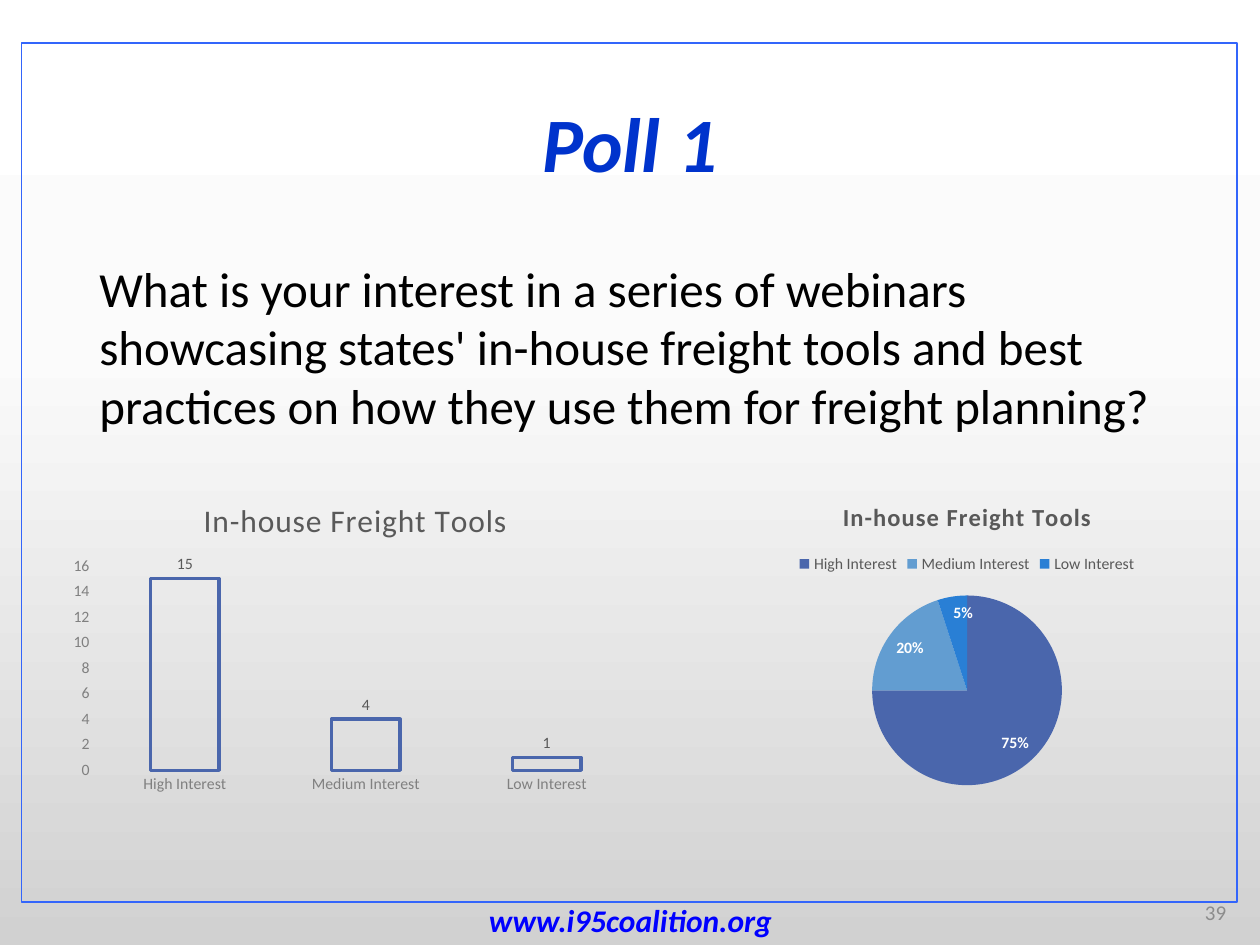
from copy import deepcopy

from pptx import Presentation
from pptx.chart.data import CategoryChartData
from pptx.dml.color import RGBColor
from pptx.enum.chart import XL_CHART_TYPE as ChartType
from pptx.enum.chart import XL_LABEL_POSITION as LabelPosition
from pptx.enum.chart import XL_LEGEND_POSITION as LegendPosition
from pptx.enum.chart import XL_TICK_MARK as TickMark
from pptx.enum.shapes import MSO_SHAPE as Shape
from pptx.enum.text import MSO_ANCHOR as Anchor
from pptx.enum.text import PP_ALIGN as Align
from pptx.util import Inches, Pt

FONT = "Calibri"
CHART_TITLE = "In-house Freight Tools"
CATEGORIES = ["High Interest", "Medium Interest", "Low Interest"]
BACKGROUND_STOPS = [(0, "FFFFFF"), (0.37, "FBFBFB"), (1, "D1D1D1")]
QUESTION = (
    "What is your interest in a series of webinars showcasing states' "
    "in-house freight tools and best practices on how they use them "
    "for freight planning?"
)


def color(value):
    return RGBColor.from_string(value)


def format_font(font, size, shade, **styles):
    values = {"name": FONT, "size": Pt(size), **styles}
    for name, value in values.items():
        setattr(font, name, value)
    font.color.rgb = color(shade)


def paint_background(page):
    fill = page.background.fill
    fill.gradient()
    fill.gradient_angle = 270
    first = page.element.xpath(".//p:bg//a:gs")[0]
    first.addnext(deepcopy(first))
    for stop, (position, shade) in zip(fill.gradient_stops, BACKGROUND_STOPS):
        stop.position = position
        stop.color.rgb = color(shade)


def add_frame(page):
    frame = page.shapes.add_shape(
        Shape.RECTANGLE, Inches(0.17), Inches(0.34), Inches(9.65), Inches(6.82)
    )
    frame.shadow.inherit = False
    frame.fill.background()
    frame.line.color.rgb = color("3365FB")
    frame.line.width = Pt(1)


def write_text(box, text, size, shade, align, anchor, **styles):
    box.text_frame.word_wrap = True
    box.text_frame.vertical_anchor = anchor
    para = box.text_frame.paragraphs[0]
    para.alignment = align
    span = para.add_run()
    span.text = text
    format_font(span.font, size, shade, **styles)


def add_title(page, text):
    title = page.shapes.title
    place = {"left": 0.69, "top": 0.4, "width": 8.62, "height": 1.45}
    for name, value in place.items():
        setattr(title, name, Inches(value))
    write_text(title, text, 44, "0033CC", Align.CENTER, Anchor.MIDDLE,
               bold=True, italic=True)


def add_text(page, place, *text_format, **styles):
    box = page.shapes.add_textbox(*map(Inches, place))
    write_text(box, *text_format, **styles)


def add_chart(page, kind, place, values, title_size, title_bold):
    data = CategoryChartData()
    data.categories = CATEGORIES
    data.add_series(CHART_TITLE, values)
    chart = page.shapes.add_chart(kind, *map(Inches, place), data).chart
    format_font(chart.font, 10, "000000")
    chart.has_title = True
    span = chart.chart_title.text_frame.paragraphs[0].add_run()
    span.text = CHART_TITLE
    format_font(span.font, title_size, "595959", bold=title_bold)
    span.font._element.set("spc", "50")
    chart.chart_title.include_in_layout = False
    return chart


def format_labels(plot, position, shade, **options):
    plot.has_data_labels = True
    labels = plot.data_labels
    bold = options.pop("bold", False)
    for name, value in options.items():
        setattr(labels, name, value)
    labels.position = position
    format_font(labels.font, 9, shade, bold=bold)


def add_column_chart(page):
    chart = add_chart(page, ChartType.COLUMN_CLUSTERED,
                      (0.49, 3.81, 4.66, 2.54), (15, 4, 1), 18, False)
    chart.has_legend = False
    for axis in (chart.category_axis, chart.value_axis):
        axis.has_major_gridlines = False
        axis.major_tick_mark = axis.minor_tick_mark = TickMark.NONE
        axis.format.line.fill.background()
        format_font(axis.tick_labels.font, 9, "808080")
    scale = {"minimum_scale": 0, "maximum_scale": 16, "major_unit": 2}
    for name, value in scale.items():
        setattr(chart.value_axis, name, value)
    plot = chart.plots[0]
    plot.vary_by_categories = False
    plot.gap_width = 164
    plot.overlap = -35
    bars = plot.series[0].format
    bars.fill.background()
    bars.line.color.rgb = color("4A66AC")
    bars.line.width = Pt(2)
    format_labels(plot, LabelPosition.OUTSIDE_END, "595959", show_value=True)


def add_pie_chart(page):
    chart = add_chart(page, ChartType.PIE, (5.67, 3.83, 4.01, 2.54),
                      (75, 20, 5), 14, True)
    chart.has_legend = True
    chart.legend.position = LegendPosition.TOP
    chart.legend.include_in_layout = False
    format_font(chart.legend.font, 9, "595959")
    plot = chart.plots[0]
    plot.vary_by_categories = True
    for index, shade in enumerate(("4A66AC", "629DD1", "297FD5")):
        fill = plot.series[0].points[index].format.fill
        fill.solid()
        fill.fore_color.rgb = color(shade)
    format_labels(plot, LabelPosition.INSIDE_END, "FFFFFF", bold=True,
                  show_value=False, show_percentage=True,
                  number_format="0%", number_format_is_linked=False)


def main():
    deck = Presentation()
    deck.slide_width, deck.slide_height = Inches(10), Inches(7.5)
    page = deck.slides.add_slide(deck.slide_layouts[5])
    paint_background(page)
    add_text(page, (9.16, 7.04, 0.67, 0.4), "39", 12, "8C8C8C",
             Align.RIGHT, Anchor.MIDDLE)
    add_frame(page)
    add_text(page, (3.17, 7.1, 3.67, 0.4), "www.i95coalition.org", 18,
             "0000FF", Align.CENTER, Anchor.TOP, bold=True, italic=True)
    add_title(page, "Poll 1")
    add_text(page, (0.69, 2, 8.62, 4.76), QUESTION, 28, "000000",
             Align.LEFT, Anchor.TOP)
    add_column_chart(page)
    add_pie_chart(page)
    deck.save("out.pptx")


if __name__ == "__main__":
    main()
